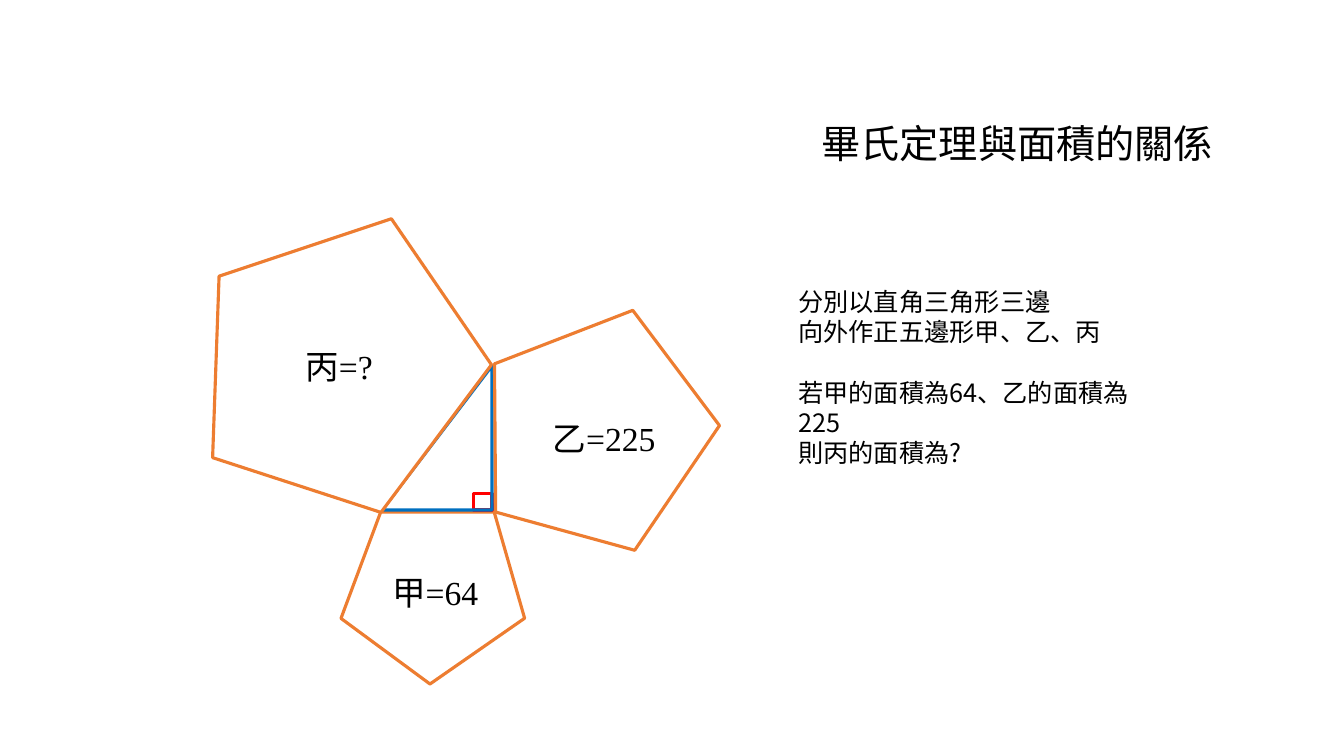
from dataclasses import dataclass
from lxml.etree import SubElement
from pptx import Presentation
from pptx.dml.color import RGBColor
from pptx.enum.shapes import MSO_SHAPE as SHAPE
from pptx.enum.text import MSO_ANCHOR as ANCHOR, PP_ALIGN as ALIGN
from pptx.oxml.ns import qn
from pptx.util import Emu, Pt

PX = 9144
LINE_PITCH = 21.6
BODY_FONT = "Noto Sans CJK SC"


@dataclass
class Figure:
    """A preset outline, in px and degrees."""
    kind: SHAPE
    box: tuple[int, int, int, int]
    line: str
    fill: str = ""
    angle: float = 0
    flip: bool = False


@dataclass
class Label:
    """A text box; a paragraph paired with True follows a gap of one line."""
    box: tuple[int, int, int, int]
    paragraphs: list[tuple[str, bool]]
    size: int
    font: str
    align: ALIGN = ALIGN.LEFT
    wrap: bool = True


def emu(px: int) -> Emu:
    """Turn px into EMU."""
    return Emu(px * PX)


def color(value: str) -> RGBColor:
    """Turn a hex string into a colour."""
    return RGBColor.from_string(value)


def apply(target: object, values: dict[str, object]) -> None:
    """Set every named attribute on the target."""
    for name, value in values.items():
        setattr(target, name, value)


def draw_figure(s, fig: Figure) -> None:
    """Draw an outlined preset shape."""
    sp = s.shapes.add_shape(fig.kind, *map(emu, fig.box))
    sp.shadow.inherit = False
    sp.rotation = fig.angle
    if fig.fill:
        sp.fill.solid()
        sp.fill.fore_color.rgb = color(fig.fill)
    else:
        sp.fill.background()
    sp.line.color.rgb = color(fig.line)
    sp.line.width = Pt(2.25)
    if fig.flip:
        sp._element.spPr.find(qn("a:xfrm")).set("flipH", "1")


def draw_label(s, label: Label) -> None:
    """Draw a text box with uniform black text."""
    tf = s.shapes.add_textbox(*map(emu, label.box)).text_frame
    apply(tf, {"word_wrap": label.wrap, "vertical_anchor": ANCHOR.TOP})
    for i, (text, gap) in enumerate(label.paragraphs):
        p = tf.add_paragraph() if i else tf.paragraphs[0]
        p.alignment = label.align
        if gap:
            p.space_before = Pt(LINE_PITCH)
        r = p.add_run()
        r.text = text
        apply(r.font, {"name": label.font, "size": Pt(label.size)})
        r.font.color.rgb = color("000000")
        if label.font == BODY_FONT:
            p.line_spacing = Pt(LINE_PITCH)
            SubElement(r.font._element, qn("a:ea")).set("typeface", BODY_FONT)


def pentagon(box: tuple[int, int, int, int], angle: float) -> Figure:
    """Describe a pentagon built on one side of the triangle."""
    return Figure(SHAPE.REGULAR_PENTAGON, box, "ED7D31", "FFFFFF", angle)


def area(box: tuple[int, int, int, int], text: str, align: ALIGN = ALIGN.LEFT) -> Label:
    """Describe the area label of a pentagon."""
    return Label(box, [(text, False)], 24, "Times New Roman", align)


ITEMS = [
    pentagon((333, 493, 185, 168), 325.2),
    Label((805, 113, 413, 57), [("畢氏定理與面積的關係", False)], 28, "Calibri", wrap=False),
    Label((782, 279, 387, 162), [
        ("分別以直角三角形三邊", False),
        ("向外作正五邊形甲、乙、丙", False),
        ("若甲的面積為64、乙的面積為225", True),
        ("則丙的面積為?", False),
    ], 18, BODY_FONT),
    Figure(SHAPE.RECTANGLE, (470, 490, 18, 16), "FF0000"),
    Figure(SHAPE.RIGHT_TRIANGLE, (379, 363, 109, 143), "0070C0", flip=True),
    area((379, 562, 117, 50), "甲=64"),
    pentagon((177, 220, 296, 269), 306.8),
    pentagon((460, 313, 242, 219), 304.2),
    area((510, 410, 178, 50), "乙=225", ALIGN.CENTER),
    area((293, 338, 95, 50), "丙=?"),
]


def main() -> None:
    """Build the slide and save it."""
    prs = Presentation()
    apply(prs, {"slide_width": emu(1333), "slide_height": emu(750)})
    s = prs.slides.add_slide(prs.slide_layouts[6])
    for item in ITEMS:
        if isinstance(item, Figure):
            draw_figure(s, item)
        else:
            draw_label(s, item)
    prs.save("out.pptx")


if __name__ == "__main__":
    main()
